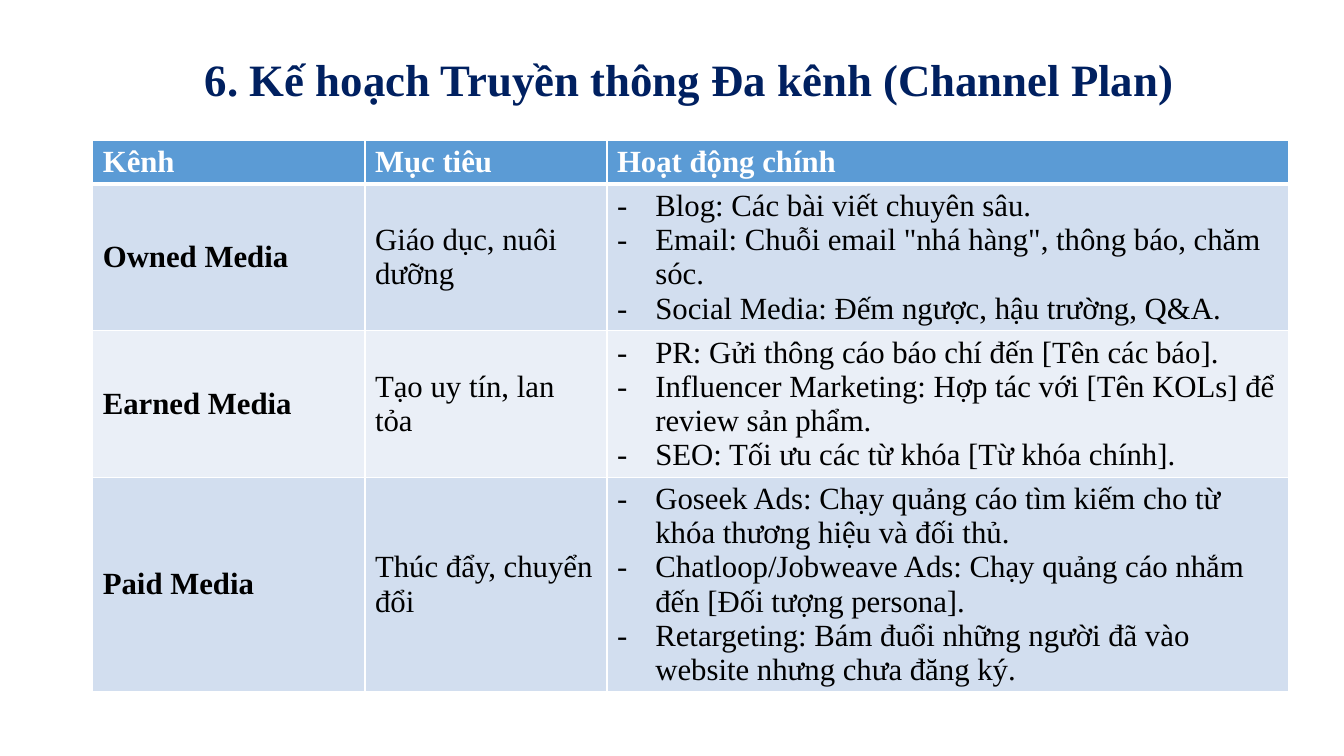
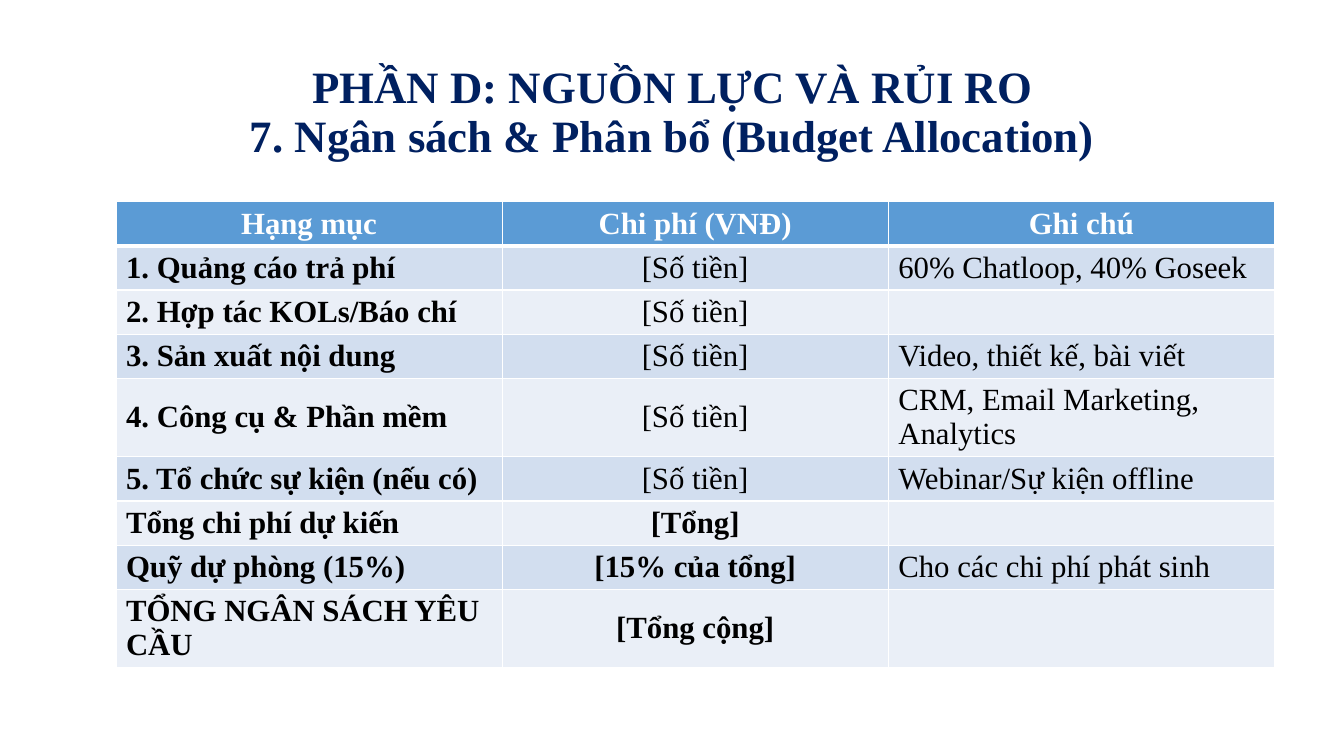
from dataclasses import dataclass

from lxml import etree
from pptx import Presentation
from pptx.dml.color import RGBColor
from pptx.enum.text import MSO_ANCHOR, MSO_AUTO_SIZE, PP_ALIGN
from pptx.oxml.ns import qn
from pptx.util import Inches, Pt

LEFT, CENTER = PP_ALIGN.LEFT, PP_ALIGN.CENTER
MIDDLE = MSO_ANCHOR.MIDDLE
NO_AUTOFIT = MSO_AUTO_SIZE.NONE
TITLE_ONLY = 5


@dataclass(frozen=True)
class Theme:
    font: str = "Times New Roman"
    title_size: int = 32
    cell_size: int = 22
    title: str = "002060"
    header: str = "5B9BD5"
    bands: tuple = ("D2DEEF", "EAEFF7")
    text: str = "000000"
    white: str = "FFFFFF"
    thin: int = 1
    thick: int = 3
    indent: float = 0.38
    row_height: float = 0.41
    title_width: float = 11.5
    title_height: float = 1.45


THEME = Theme()

CHANNELS = [
    ("Kênh", "Mục tiêu", "Hoạt động chính"),
    ("Owned Media", "Giáo dục, nuôi dưỡng", [
        "Blog: Các bài viết chuyên sâu.",
        'Email: Chuỗi email "nhá hàng", thông báo, chăm sóc.',
        "Social Media: Đếm ngược, hậu trường, Q&A."]),
    ("Earned Media", "Tạo uy tín, lan tỏa", [
        "PR: Gửi thông cáo báo chí đến [Tên các báo].",
        "Influencer Marketing: Hợp tác với [Tên KOLs] để review sản phẩm.",
        "SEO: Tối ưu các từ khóa [Từ khóa chính]."]),
    ("Paid Media", "Thúc đẩy, chuyển đổi", [
        "Goseek Ads: Chạy quảng cáo tìm kiếm cho từ khóa thương hiệu và đối thủ.",
        "Chatloop/Jobweave Ads: Chạy quảng cáo nhắm đến [Đối tượng persona].",
        "Retargeting: Bám đuổi những người đã vào website nhưng chưa đăng ký."]),
]

AMOUNT = "[Số tiền]"
BUDGET = [
    ("Hạng mục", "Chi phí (VNĐ)", "Ghi chú"),
    ("1. Quảng cáo trả phí", AMOUNT, "60% Chatloop, 40% Goseek"),
    ("2. Hợp tác KOLs/Báo chí", AMOUNT, ""),
    ("3. Sản xuất nội dung", AMOUNT, "Video, thiết kế, bài viết"),
    ("4. Công cụ & Phần mềm", AMOUNT, "CRM, Email Marketing, Analytics"),
    ("5. Tổ chức sự kiện (nếu có)", AMOUNT, "Webinar/Sự kiện offline"),
    ("Tổng chi phí dự kiến", "[Tổng]", ""),
    ("Quỹ dự phòng (15%)", "[15% của tổng]", "Cho các chi phí phát sinh"),
    ("TỔNG NGÂN SÁCH YÊU CẦU", "[Tổng cộng]", ""),
]
FIRST_TOTAL_ROW = 6


def format_paragraph(p, size, color, bold, align):
    p.alignment = align
    for r in p.runs:
        r.font.name = THEME.font
        r.font.size = Pt(size)
        r.font.bold = bold
        r.font.color.rgb = RGBColor.from_string(color)


def add_dash(p):
    """Give the paragraph a hanging dash as its bullet."""
    pPr = p._p.get_or_add_pPr()
    indent = Inches(THEME.indent)
    pPr.set("marL", str(indent))
    pPr.set("indent", str(-indent))
    etree.SubElement(pPr, qn("a:buFont"), typeface=THEME.font)
    etree.SubElement(pPr, qn("a:buChar"), char="-")


def set_borders(cell, top, bottom):
    """Draw white borders; call before the fill, which must follow in the XML."""
    tcPr = cell._tc.get_or_add_tcPr()
    widths = {"L": THEME.thin, "R": THEME.thin, "T": top, "B": bottom}
    for side, width in widths.items():
        ln = etree.SubElement(tcPr, qn(f"a:ln{side}"), w=str(Pt(width)))
        fill = etree.SubElement(ln, qn("a:solidFill"))
        etree.SubElement(fill, qn("a:srgbClr"), val=THEME.white)


def fill_cell(cell, content, row, bold, align):
    header = row == 0
    set_borders(cell,
                THEME.thick if row == 1 else THEME.thin,
                THEME.thick if header else THEME.thin)
    cell.fill.solid()
    background = THEME.header if header else THEME.bands[(row - 1) % 2]
    cell.fill.fore_color.rgb = RGBColor.from_string(background)
    cell.vertical_anchor = MIDDLE

    bulleted = isinstance(content, list)
    tf = cell.text_frame
    tf.text = "\n".join(content) if bulleted else content
    for p in tf.paragraphs:
        format_paragraph(p, THEME.cell_size,
                         THEME.white if header else THEME.text, bold, align)
        if bulleted:
            add_dash(p)


def add_titled_slide(prs, title, left, top):
    slide = prs.slides.add_slide(prs.slide_layouts[TITLE_ONLY])
    sp = slide.shapes.title
    sp.left, sp.top = Inches(left), Inches(top)
    sp.width, sp.height = Inches(THEME.title_width), Inches(THEME.title_height)
    tf = sp.text_frame
    tf.word_wrap = True
    tf.auto_size = NO_AUTOFIT
    tf.vertical_anchor = MIDDLE
    p = tf.paragraphs[0]
    p.text = title
    p.line_spacing = 0.9
    format_paragraph(p, THEME.title_size, THEME.title, True, CENTER)
    return slide


def add_grid(slide, rows, left, top, widths, header_align, aligns, total_row=None):
    """Add a banded table; from total_row on, the second column is bold too."""
    table = slide.shapes.add_table(
        len(rows), len(widths), Inches(left), Inches(top),
        Inches(sum(widths)), Inches(THEME.row_height * len(rows))).table
    for column, width in zip(table.columns, widths):
        column.width = Inches(width)
    for i, row in enumerate(rows):
        is_total = total_row is not None and i >= total_row
        for j, content in enumerate(row):
            bold = i == 0 or j == 0 or (is_total and j == 1)
            align = header_align if i == 0 else aligns[j]
            fill_cell(table.cell(i, j), content, i, bold, align)


def main():
    prs = Presentation()
    prs.slide_width, prs.slide_height = Inches(13.33), Inches(7.5)

    slide = add_titled_slide(
        prs, "6. Kế hoạch Truyền thông Đa kênh (Channel Plan)", 1.09, 0.09)
    add_grid(slide, CHANNELS, 0.92, 1.39, (2.7, 2.4, 6.76), LEFT, (LEFT,) * 3)

    slide = add_titled_slide(
        prs, "PHẦN D: NGUỒN LỰC VÀ RỦI RO\v"
             "7. Ngân sách & Phân bổ (Budget Allocation)", 0.92, 0.4)
    add_grid(slide, BUDGET, 1.15, 2, (3.83,) * 3, CENTER,
             (LEFT, CENTER, LEFT), FIRST_TOTAL_ROW)

    prs.save("out.pptx")


if __name__ == "__main__":
    main()
